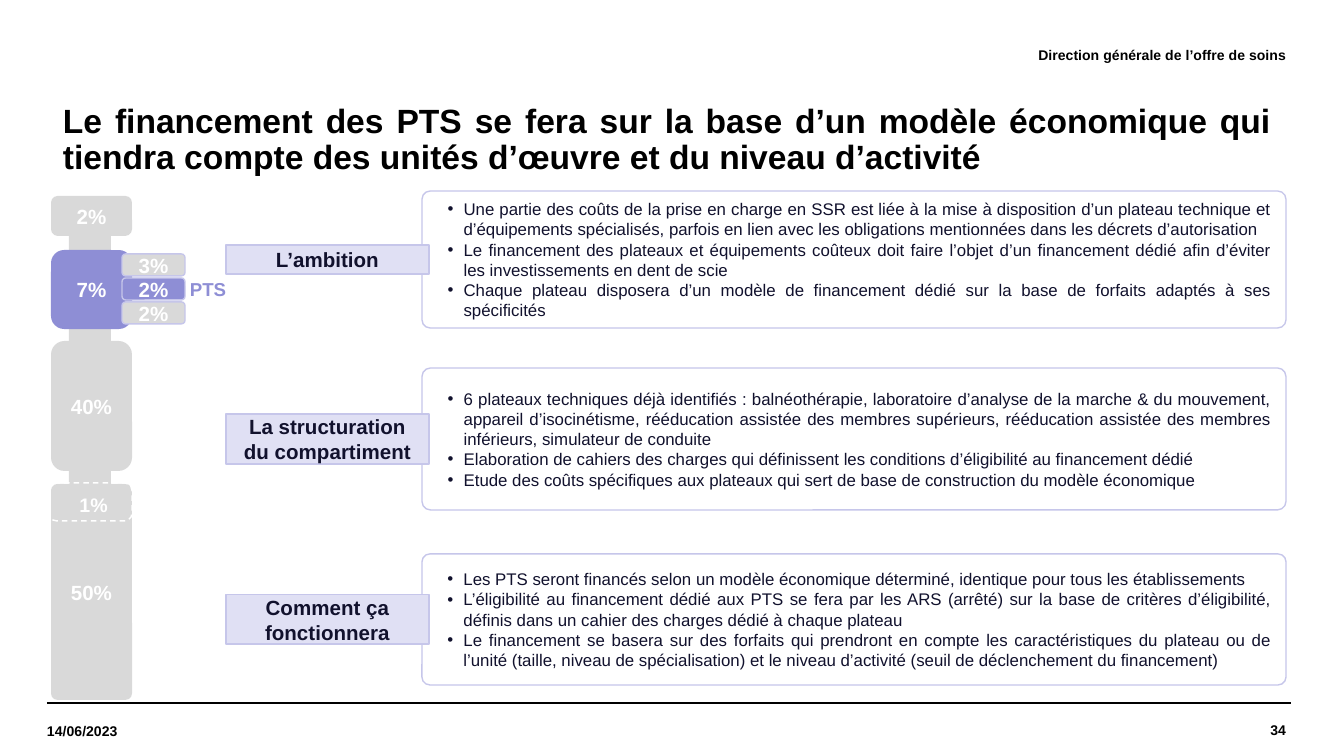
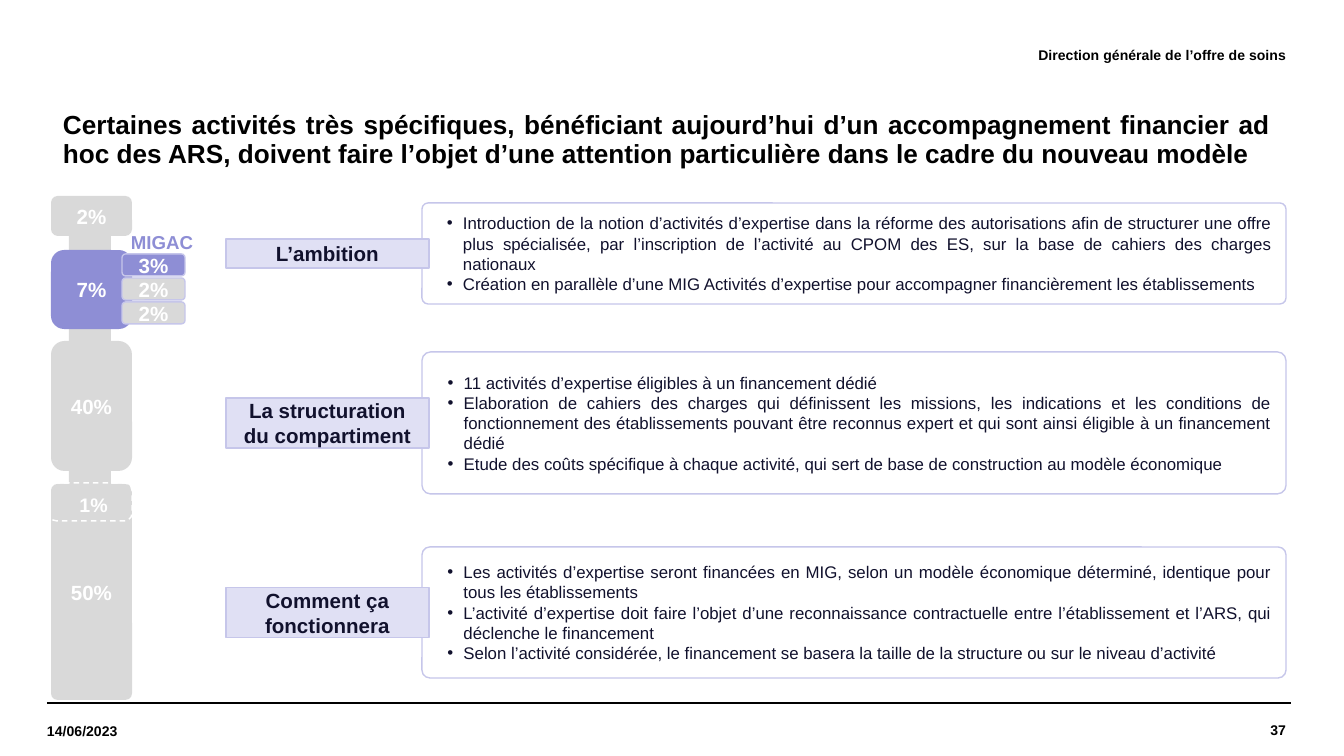
from pptx import Presentation
from pptx.dml.color import RGBColor as Rgb
from pptx.enum.dml import MSO_LINE as Dash
from pptx.enum.shapes import MSO_CONNECTOR as Link, MSO_SHAPE as Form
from pptx.enum.text import MSO_ANCHOR as Anchor, MSO_AUTO_SIZE as Auto, PP_ALIGN as Align
from pptx.oxml.ns import qn
from pptx.util import Pt
from lxml.etree import SubElement as Sub

PX = 9144000 / 1344


class Theme:
    face = "Arial"
    black, white, ink = "000000", "FFFFFF", "11112D"
    grey, violet, edge, pale = "D9D9D9", "8E8ED5", "C6C6EA", "E0E0F4"
    title = (18, black, True, Align.JUSTIFY)
    dense = (14, black, True, Align.JUSTIFY)
    left = (7.5, black, True, Align.LEFT)
    right = (7.5, black, True, Align.RIGHT)
    body = (9, ink, False, Align.JUSTIFY)
    tag = (11, ink, True, Align.CENTER)
    share = (11, white, True, Align.CENTER)
    small = (10.5, white, True, Align.CENTER)
    key = (10, violet, True, Align.LEFT)


FLUSH = dict(margin_left=0, margin_top=0, margin_right=0, margin_bottom=0)
BAND = dict(FLUSH, vertical_anchor=Anchor.MIDDLE)
MID = dict(vertical_anchor=Anchor.MIDDLE)
GROW = dict(auto_size=Auto.SHAPE_TO_FIT_TEXT)


def draw(slide, kind, at, fill=None, edge=None, width=0.75, round=None):
    spot = [int(n * PX) for n in at]
    if kind is None:
        return slide.shapes.add_textbox(*spot)
    item = slide.shapes.add_shape(kind, *spot)
    item.shadow.inherit = False
    if round:
        item.adjustments[0] = round
    for part, tone in ((item.fill, fill), (item.line.fill, edge)):
        if tone:
            part.solid()
            part.fore_color.rgb = Rgb.from_string(tone)
        else:
            part.background()
    if edge:
        item.line.width = Pt(width)
    return item


def write(item, rows, style, look, dots=False):
    size, tone, bold, align = style
    frame = item.text_frame
    for name, value in dict(look, word_wrap=True).items():
        setattr(frame, name, value)
    for n, row in enumerate(rows):
        para = frame.add_paragraph() if n else frame.paragraphs[0]
        para.text = row
        para.alignment = align
        if dots:
            props = para._p.get_or_add_pPr()
            props.set("marL", str(int(26 * PX)))
            props.set("indent", str(int(-16 * PX)))
            Sub(props, qn("a:buFont")).set("typeface", Theme.face)
            Sub(props, qn("a:buChar")).set("char", "•")
        for name, value in dict(name=Theme.face, size=Pt(size), bold=bold).items():
            setattr(para.runs[0].font, name, value)
        para.runs[0].font.color.rgb = Rgb.from_string(tone)


TAGS = [("L’ambition", 29), ("La structuration du compartiment", 50), ("Comment ça fonctionnera", 50)]
BLOCKS = [
    ("50%", 484, 216, Theme.grey, 0.08),
    ("40%", 341, 130, Theme.grey, None),
    ("2%", 196, 40, Theme.grey, None),
    ("7%", 250, 79, Theme.violet, None),
]
CHIPS = ["3%", "2%", "2%"]

PAGES = [
    dict(
        page="34",
        title="Le financement des PTS se fera sur la base d’un modèle économique qui tiendra compte des unités d’œuvre et du niveau d’activité",
        style=Theme.title,
        key="PTS", spot=(190, 278, 171, 23), chip=1,
        boxes=[
            (191, 137, [
                "Une partie des coûts de la prise en charge en SSR est liée à la mise à disposition d’un plateau technique et d’équipements spécialisés, parfois en lien avec les obligations mentionnées dans les décrets d’autorisation",
                "Le financement des plateaux et équipements coûteux doit faire l’objet d’un financement dédié afin d’éviter les investissements en dent de scie",
                "Chaque plateau disposera d’un modèle de financement dédié sur la base de forfaits adaptés à ses spécificités",
            ]),
            (368, 142, [
                "6 plateaux techniques déjà identifiés : balnéothérapie, laboratoire d’analyse de la marche & du mouvement, appareil d’isocinétisme, rééducation assistée des membres supérieurs, rééducation assistée des membres inférieurs, simulateur de conduite",
                "Elaboration de cahiers des charges qui définissent les conditions d’éligibilité au financement dédié",
                "Etude des coûts spécifiques aux plateaux qui sert de base de construction du modèle économique",
            ]),
            (554, 131, [
                "Les PTS seront financés selon un modèle économique déterminé, identique pour tous les établissements",
                "L’éligibilité au financement dédié aux PTS se fera par les ARS (arrêté) sur la base de critères d’éligibilité, définis dans un cahier des charges dédié à chaque plateau",
                "Le financement se basera sur des forfaits qui prendront en compte les caractéristiques du plateau ou de l’unité (taille, niveau de spécialisation) et le niveau d’activité (seuil de déclenchement du financement)",
            ]),
        ],
    ),
    dict(
        page="37",
        title="Certaines activités très spécifiques, bénéficiant aujourd’hui d’un accompagnement financier ad hoc des ARS, doivent faire l’objet d’une attention particulière dans le cadre du nouveau modèle",
        style=Theme.dense,
        key="MIGAC", spot=(131, 231, 89, 23), chip=0,
        boxes=[
            (203, 101, [
                "Introduction de la notion d’activités d’expertise dans la réforme des autorisations afin de structurer une offre plus spécialisée, par l’inscription de l’activité au CPOM des ES, sur la base de cahiers des charges nationaux",
                "Création en parallèle d’une MIG Activités d’expertise pour accompagner financièrement les établissements",
            ]),
            (352, 142, [
                "11 activités d’expertise éligibles à un financement dédié",
                "Elaboration de cahiers des charges qui définissent les missions, les indications et les conditions de fonctionnement des établissements pouvant être reconnus expert et qui sont ainsi éligible à un financement dédié",
                "Etude des coûts spécifique à chaque activité, qui sert de base de construction au modèle économique",
            ]),
            (547, 131, [
                "Les activités d’expertise seront financées en MIG, selon un modèle économique déterminé, identique pour tous les établissements",
                "L’activité d’expertise doit faire l’objet d’une reconnaissance contractuelle entre l’établissement et l’ARS, qui déclenche le financement",
                "Selon l’activité considérée, le financement se basera la taille de la structure ou sur le niveau d’activité",
            ]),
        ],
    ),
]

deck = Presentation()
deck.slide_width, deck.slide_height = int(1344 * PX), int(756 * PX)

for page in PAGES:
    slide = deck.slides.add_slide(deck.slide_layouts[5])

    for x in (47, 52):
        rule = slide.shapes.add_connector(
            Link.STRAIGHT, *[int(n * PX) for n in (x, 703, x + 1239, 703)])
        rule.line.width = Pt(0.8)
        rule.line.color.rgb = Rgb.from_string(Theme.black)
        Sub(rule._element.spPr, qn("a:effectLst"))

    for text, at, style in (
        (page["page"], (1087, 703, 199, 53), Theme.right),
        ("14/06/2023", (47, 705, 177, 52), Theme.left),
        ("Direction générale de l’offre de soins", (422, 29, 864, 52), Theme.right),
    ):
        write(draw(slide, None, at), [text], style, BAND)

    title = slide.shapes.title
    for name, n in dict(left=47, top=101, width=1238, height=79).items():
        setattr(title, name, int(n * PX))
    write(title, [page["title"]], page["style"],
          dict(MID, auto_size=Auto.NONE, margin_left=int(16 * PX)))
    title.text_frame.paragraphs[0].line_spacing = 0.9

    for (name, tall), (top, height, rows) in zip(TAGS, page["boxes"]):
        box = draw(slide, Form.ROUNDED_RECTANGLE, (422, top, 864, height),
                   Theme.white, Theme.edge, round=0.06)
        write(box, rows, Theme.body, MID, dots=True)
        tag = draw(slide, Form.RECTANGLE, (226, top + (height - tall) / 2, 203, tall),
                   Theme.pale, Theme.edge, 1)
        write(tag, [name], Theme.tag, MID)

    draw(slide, Form.RECTANGLE, (69, 206, 42, 484), Theme.grey)
    for text, top, height, fill, round in BLOCKS:
        block = draw(slide, Form.ROUNDED_RECTANGLE, (51, top, 81, height), fill, round=round)
        write(block, [text], Theme.share, MID)

    for n, text in enumerate(CHIPS):
        fill = Theme.violet if n == page["chip"] else Theme.grey
        chip = draw(slide, Form.ROUNDED_RECTANGLE, (122, 254 + 24 * n, 63, 22), fill, Theme.edge)
        write(chip, [text], Theme.share, MID)

    write(draw(slide, None, page["spot"]), [page["key"]], Theme.key, dict(FLUSH, **GROW))
    write(draw(slide, None, (54, 486, 79, 38)), ["1%"], Theme.small, GROW)
    frame = draw(slide, Form.ROUNDED_RECTANGLE, (49, 483, 83, 38), edge=Theme.white, round=0.2)
    frame.line.dash_style = Dash.DASH

deck.save("out.pptx")
